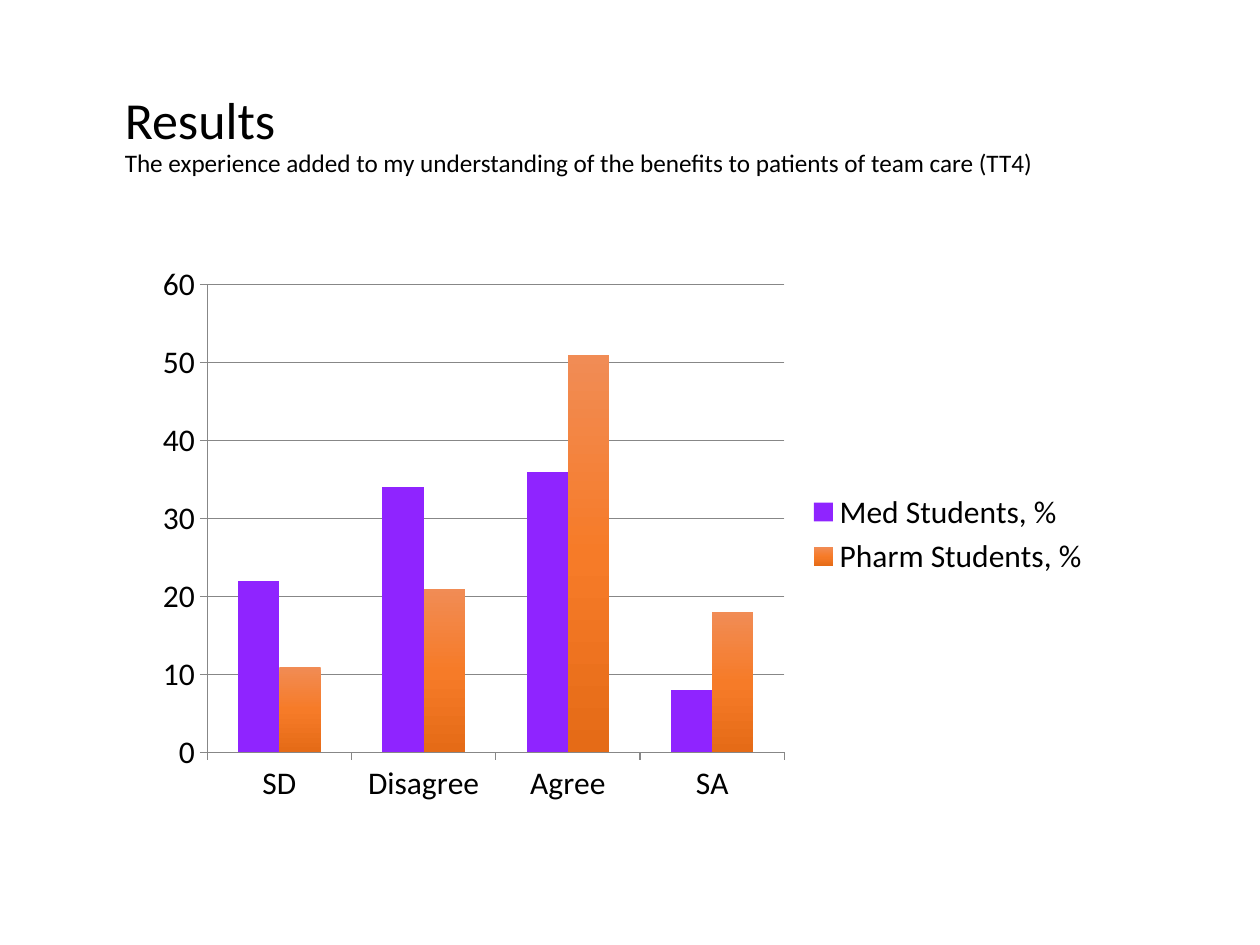
from copy import deepcopy

from pptx import Presentation
from pptx.chart.data import CategoryChartData
from pptx.dml.color import RGBColor
from pptx.enum.chart import XL_CHART_TYPE, XL_LEGEND_POSITION, XL_TICK_MARK
from pptx.enum.text import MSO_ANCHOR, MSO_AUTO_SIZE, PP_ALIGN
from pptx.oxml.ns import qn
from pptx.util import Inches, Pt

BLACK = RGBColor(0x00, 0x00, 0x00)
GRAY = RGBColor(0x87, 0x87, 0x87)
PURPLE = RGBColor(0x8F, 0x24, 0xFF)
ORANGE_LIGHT = RGBColor(0xF1, 0x8C, 0x55)
ORANGE = RGBColor(0xF6, 0x7B, 0x28)
ORANGE_DARK = RGBColor(0xE5, 0x6B, 0x17)
FONT = "Calibri"


def style_font(font, size):
    font.name = FONT
    font.size = Pt(size)
    font.bold = False
    font.color.rgb = BLACK


def place_heading(slide, left, top, width, height):
    heading = slide.shapes.title
    heading.left, heading.top = left, top
    heading.width, heading.height = width, height
    frame = heading.text_frame
    frame.text = (
        "Results\n"
        "The experience added to my understanding of the benefits "
        "to patients of team care (TT4)"
    )
    frame.word_wrap = True
    frame.auto_size = MSO_AUTO_SIZE.NONE
    frame.vertical_anchor = MSO_ANCHOR.TOP
    frame.margin_top = Inches(0.07)
    for line, size in zip(frame.paragraphs, (29.7, 14.4)):
        line.alignment = PP_ALIGN.LEFT
        line.line_spacing = 0.9
        line.space_before = Pt(0)
        style_font(line.font, size)


def fill_vertical_gradient(series, colors):
    fill = series.format.fill
    fill.gradient()
    fill.gradient_angle = 270
    stop_list = next(series._element.iter(qn("a:gsLst")))
    stop_list.insert(1, deepcopy(stop_list[0]))
    for index, (stop, color) in enumerate(zip(fill.gradient_stops, colors)):
        stop.position = index / (len(colors) - 1)
        stop.color.rgb = color


def place_responses(slide, left, top, width, height):
    responses = CategoryChartData()
    responses.categories = ["SD", "Disagree", "Agree", "SA"]
    responses.add_series("Med Students, %", (22, 34, 36, 8))
    responses.add_series("Pharm Students, %", (11, 21, 51, 18))
    chart = slide.shapes.add_chart(
        XL_CHART_TYPE.COLUMN_CLUSTERED, left, top, width, height, responses
    ).chart
    style_font(chart.font, 18)
    chart.has_title = False
    chart.has_legend = True
    chart.legend.position = XL_LEGEND_POSITION.RIGHT
    chart.legend.include_in_layout = False

    percent_axis = chart.value_axis
    percent_axis.minimum_scale = 0
    percent_axis.maximum_scale = 60
    percent_axis.major_unit = 10
    percent_axis.has_major_gridlines = True
    for axis in (chart.category_axis, percent_axis):
        axis.major_tick_mark = XL_TICK_MARK.OUTSIDE
    for part in (chart.category_axis, percent_axis, percent_axis.major_gridlines):
        part.format.line.color.rgb = GRAY
        part.format.line.width = Pt(0.75)

    columns = chart.plots[0]
    columns.gap_width = 150
    columns.overlap = 0
    columns.vary_by_categories = False
    med, pharm = columns.series
    med.format.fill.solid()
    med.format.fill.fore_color.rgb = PURPLE
    fill_vertical_gradient(pharm, (ORANGE_LIGHT, ORANGE, ORANGE_DARK))


def main():
    deck = Presentation()
    deck.slide_width, deck.slide_height = Inches(10), Inches(7.5)
    slide = deck.slides.add_slide(deck.slide_layouts[5])
    place_heading(slide, Inches(0.89), Inches(0.68), Inches(8.72), Inches(1.34))
    place_responses(slide, Inches(1.14), Inches(2.02), Inches(7.61), Inches(4.44))
    deck.save("out.pptx")


if __name__ == "__main__":
    main()
